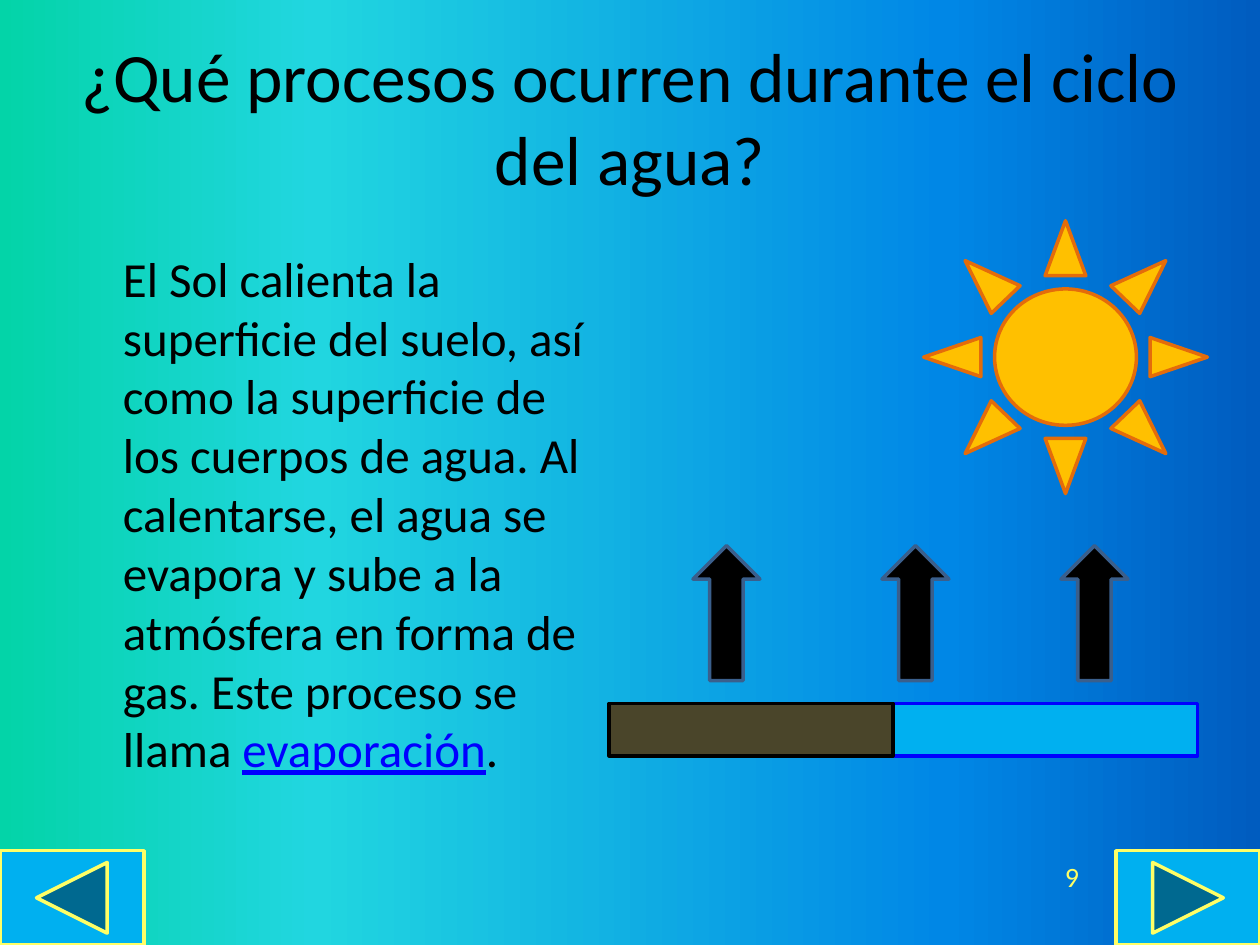
from dataclasses import dataclass

from lxml.etree import SubElement
from pptx import Presentation
from pptx.dml.color import RGBColor
from pptx.enum.shapes import MSO_SHAPE as Preset
from pptx.enum.text import MSO_ANCHOR as Anchor, PP_ALIGN as Align
from pptx.oxml.ns import qn
from pptx.util import Cm, Pt


@dataclass(frozen=True)
class Theme:
    font: str = "Calibri"
    title_size: float = 39.6
    body_size: float = 28
    number_size: float = 16
    outline: float = 2
    ink: str = "000000"
    link: str = "0000FF"
    sun: str = "FFC000"
    sun_edge: str = "E46C0A"
    water: str = "00B0F0"
    water_edge: str = "0000FF"
    soil: str = "4A452A"
    arrow_edge: str = "3A5F8C"
    accent: str = "FFFF66"
    sky: tuple = ((0, "03D4A8"), (25, "21D6E0"), (75, "0087E6"), (100, "005CBF"))


THEME = Theme()


def rgb(code):
    return RGBColor.from_string(code)


def paint_sky(slide):
    fill = slide.background.fill
    fill.gradient()
    fill.gradient_angle = 0
    stops = slide.element.find(".//" + qn("a:gsLst"))
    for stop in list(stops):
        stops.remove(stop)
    for percent, color in THEME.sky:
        stop = SubElement(stops, qn("a:gs"), pos=str(percent * 1000))
        SubElement(stop, qn("a:srgbClr"), val=color)


def add_figure(slide, preset, box, fill, edge):
    figure = slide.shapes.add_shape(preset, *map(Cm, box))
    figure.shadow.inherit = False
    figure.fill.solid()
    figure.fill.fore_color.rgb = rgb(fill)
    figure.line.color.rgb = rgb(edge)
    figure.line.width = Pt(THEME.outline)


def add_text(slide, box, pieces, size, align=Align.LEFT, anchor=Anchor.MIDDLE, inset=0.25):
    """Write one paragraph from (wording, colour, underlined) pieces."""
    frame = slide.shapes.add_textbox(*map(Cm, box)).text_frame
    frame.word_wrap = True
    frame.vertical_anchor = anchor
    frame.margin_left = Cm(inset)
    paragraph = frame.paragraphs[0]
    paragraph.alignment = align
    for wording, color, underlined in pieces:
        run = paragraph.add_run()
        run.text = wording
        run.font.name = THEME.font
        run.font.size = Pt(size)
        run.font.color.rgb = rgb(color)
        run.font.underline = underlined


def main():
    deck = Presentation()
    deck.slide_width, deck.slide_height = Cm(25.4), Cm(19.05)
    slide = deck.slides.add_slide(deck.slide_layouts[6])
    paint_sky(slide)

    # Title and explanation
    add_text(slide, (1.27, 0.76, 22.86, 3.18),
             [("¿Qué procesos ocurren durante el ciclo del agua?", THEME.ink, False)],
             THEME.title_size, Align.CENTER)
    explanation = [
        ("El Sol calienta la superficie del suelo, así como la superficie de los "
         "cuerpos de agua. Al calentarse, el agua se evapora y sube a la atmósfera "
         "en forma de gas. Este proceso se llama ", THEME.ink, False),
        ("evaporación", THEME.link, True),
        (".", THEME.ink, False),
    ]
    add_text(slide, (1.27, 4.88, 11.23, 12.57), explanation, THEME.body_size,
             anchor=Anchor.TOP, inset=1.21)

    # Sun, rising vapour, water and soil
    add_figure(slide, Preset.SUN, (18.62, 4.45, 5.72, 5.5), THEME.sun, THEME.sun_edge)
    for left in (13.97, 17.78, 21.39):
        add_figure(slide, Preset.UP_ARROW, (left, 11, 1.35, 2.72),
                   THEME.ink, THEME.arrow_edge)
    ground_top, ground_height = 14.18, 1.06
    add_figure(slide, Preset.RECTANGLE, (13.34, ground_top, 10.8, ground_height),
               THEME.water, THEME.water_edge)
    add_figure(slide, Preset.RECTANGLE, (12.28, ground_top, 5.72, ground_height),
               THEME.soil, THEME.ink)

    # Navigation buttons and slide number
    footer_top, button_width = 17.15, 2.9
    for preset, left in ((Preset.ACTION_BUTTON_BACK_OR_PREVIOUS, 0),
                         (Preset.ACTION_BUTTON_FORWARD_OR_NEXT, 25.4 - button_width)):
        add_figure(slide, preset, (left, footer_top, button_width, 1.9),
                   THEME.water, THEME.accent)
    add_text(slide, (16.08, footer_top, 5.92, 1.02), [("9", THEME.accent, False)],
             THEME.number_size, Align.RIGHT)

    deck.save("out.pptx")


if __name__ == "__main__":
    main()
